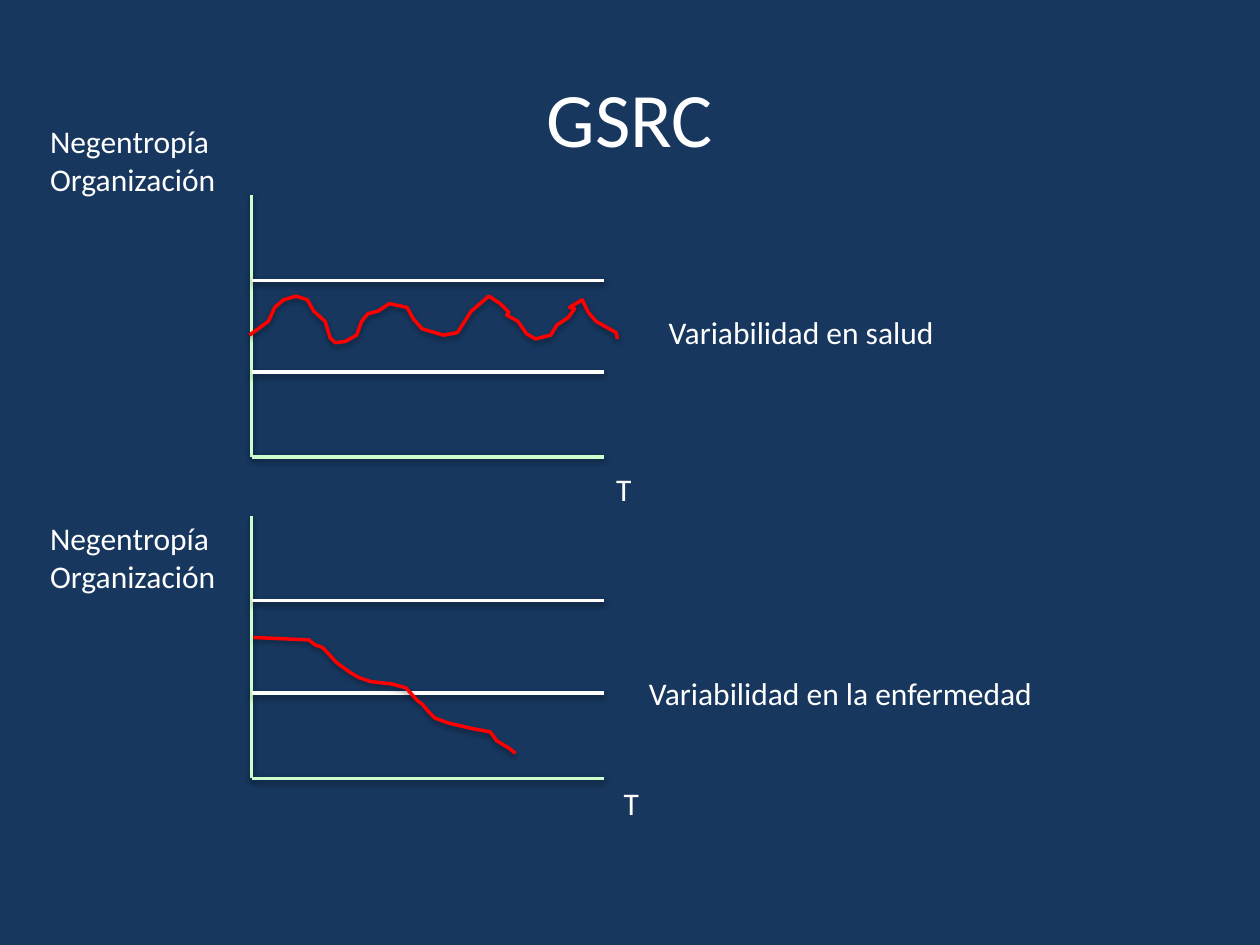
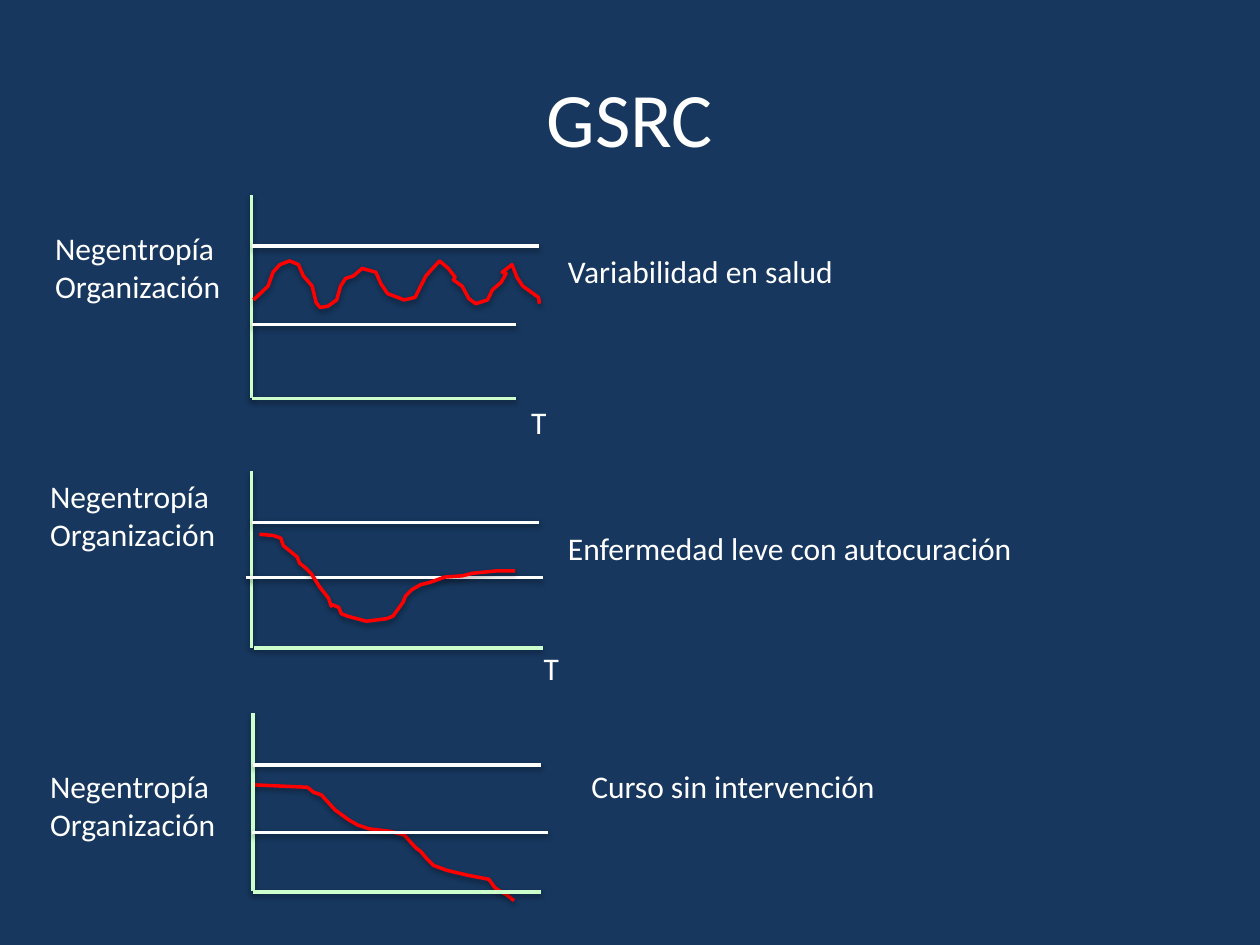
import pptx
import pptx.dml.color
import pptx.enum.shapes
import pptx.enum.text
import pptx.oxml
import pptx.util
from pptx.util import Cm

BACKGROUND, WHITE, AXIS_GREEN, CURVE_RED = "17375E", "FFFFFF", "CCFFCC", "FF0000"
FONT = "Calibri"
CURVE_UNIT = 0.0254  # cm per step of the curve points
NARROW = 2.27 / 2.92
SHADOW = (
    '<a:effectLst xmlns:a="http://schemas.openxmlformats.org/drawingml/2006/main">'
    '<a:outerShdw blurRad="40000" dist="20000" dir="5400000" rotWithShape="0">'
    '<a:srgbClr val="000000"><a:alpha val="38000"/></a:srgbClr>'
    "</a:outerShdw></a:effectLst>"
)

HEALTHY = [
    (0, 31), (15, 20), (20, 9), (27, 3), (37, 0), (46, 3), (51, 12), (60, 20),
    (64, 33), (68, 37), (76, 36), (85, 31), (89, 20), (94, 14), (102, 12), (111, 6),
    (125, 9), (130, 18), (137, 26), (154, 31), (165, 29), (176, 12), (190, 0),
    (199, 6), (206, 13), (204, 15), (213, 20), (220, 30), (227, 34), (239, 31),
    (244, 23), (253, 17), (258, 10), (254, 9), (264, 3), (269, 13), (275, 20),
    (291, 29), (292, 34),
]
DECLINE = [
    (0, 0), (44, 2), (49, 6), (55, 8), (66, 20), (77, 28), (84, 32), (93, 35),
    (110, 37), (121, 40), (130, 50), (134, 53), (139, 59), (144, 64), (155, 68),
    (172, 72), (188, 75), (193, 82), (203, 88), (208, 92),
]
RECOVERY = [
    (0, 0), (11, 1), (17, 3), (19, 9), (30, 18), (32, 23), (37, 27), (41, 31),
    (48, 42), (52, 47), (55, 51), (57, 57), (58, 56), (63, 58), (65, 63), (70, 65),
    (85, 69), (101, 67), (106, 65), (114, 54), (116, 49), (121, 44), (128, 40),
    (136, 38), (147, 34), (161, 33), (169, 31), (189, 29), (203, 29),
]

# Lengths in cm. axis: x, top, bottom; base and limits: left, right, y;
# curve: points, left, top, stretch; label: text, left, top, width.
SLIDES = [
    [
        dict(axis=(5.07, 3.94, 9.21), base=(5.07, 12.17, 9.21),
             limits=[(5.07, 12.17, 7.5), (5.07, 12.17, 5.65)],
             curve=(HEALTHY, 5.03, 5.97, 1), curve_behind=False,
             label=("Variabilidad en salud", 13.23, 6.19, 5.94),
             axis_title=(0.76, 2.34), time=(12.17, 9.35)),
        dict(axis=(5.07, 10.41, 15.69), base=(5.07, 12.17, 15.69),
             limits=[(5.07, 12.17, 13.97), (5.07, 12.17, 12.11)],
             curve=(DECLINE, 5.11, 12.85, 1), curve_behind=False,
             label=("Variabilidad en la enfermedad", 12.83, 13.46, 8.38),
             axis_title=(0.76, 10.34), time=(12.32, 15.69)),
    ],
    [
        dict(axis=(5.07, 3.94, 8.03), base=(5.07, 10.4, 8.03),
             limits=[(5.07, 10.4, 6.54), (5.07, 10.87, 4.96)],
             curve=(HEALTHY, 5.11, 5.26, NARROW), curve_behind=False,
             label=("Variabilidad en salud", 11.2, 4.95, 5.94),
             axis_title=(0.86, 4.5), time=(10.46, 8)),
        dict(axis=(5.07, 9.5, 13.06), base=(5.13, 10.94, 13.06),
             limits=[(4.95, 10.94, 11.64), (5.07, 10.87, 10.53)],
             curve=(RECOVERY, 5.23, 10.77, 1), curve_behind=False,
             label=("Enfermedad leve con autocuración", 11.2, 10.54, 9.75),
             axis_title=(0.76, 9.5), time=(10.71, 12.95)),
        dict(axis=(5.1, 14.38, 17.97), base=(5.1, 10.9, 17.98),
             limits=[(5.07, 11.05, 16.78), (5.1, 10.9, 15.42)],
             curve=(DECLINE, 5.08, 15.82, 1), curve_behind=True,
             label=("Curso sin intervención", 11.67, 15.34, 6.3),
             axis_title=(0.76, 15.34), time=None),
    ],
]


def color(hex_string):
    return pptx.dml.color.RGBColor.from_string(hex_string)


def add_text(slide, lines, left, top, width, height=1.02, size=18):
    box = slide.shapes.add_textbox(Cm(left), Cm(top), Cm(width), Cm(height))
    frame = box.text_frame
    frame.word_wrap = True
    for index, line in enumerate(lines):
        paragraph = frame.add_paragraph() if index else frame.paragraphs[0]
        run = paragraph.add_run()
        run.text = line
        run.font.name = FONT
        run.font.size = pptx.util.Pt(size)
        run.font.color.rgb = color(WHITE)
    return frame


presentation = pptx.Presentation()
presentation.slide_width, presentation.slide_height = Cm(25.4), Cm(19.05)

for panels in SLIDES:
    slide = presentation.slides.add_slide(presentation.slide_layouts[6])
    slide.background.fill.solid()
    slide.background.fill.fore_color.rgb = color(BACKGROUND)

    title = add_text(slide, ["GSRC"], 1.27, 0.76, 22.86, 3.18, 44)
    title.vertical_anchor = pptx.enum.text.MSO_ANCHOR.MIDDLE
    title.paragraphs[0].alignment = pptx.enum.text.PP_ALIGN.CENTER

    for panel in panels:
        axis_x, axis_top, axis_bottom = panel["axis"]
        strokes = [([(axis_x, axis_top), (axis_x, axis_bottom)], AXIS_GREEN)]
        for left, right, y in [panel["base"], *panel["limits"]]:
            line_color = AXIS_GREEN if (left, right, y) == panel["base"] else WHITE
            strokes.append(([(left, y), (right, y)], line_color))

        points, left, top, stretch = panel["curve"]
        curve = [(left + x * CURVE_UNIT * stretch, top + y * CURVE_UNIT) for x, y in points]
        strokes.insert(0 if panel["curve_behind"] else len(strokes), (curve, CURVE_RED))

        for stroke, stroke_color in strokes:
            start, *rest = [(Cm(x), Cm(y)) for x, y in stroke]
            if len(rest) == 1:
                shape = slide.shapes.add_connector(
                    pptx.enum.shapes.MSO_CONNECTOR.STRAIGHT, *start, *rest[0])
            else:
                builder = slide.shapes.build_freeform(*start)
                builder.add_line_segments(rest, close=False)
                shape = builder.convert_to_shape()
                shape.fill.background()
            shape.line.color.rgb = color(stroke_color)
            shape.line.width = pptx.util.Pt(2)
            shape.element.spPr.append(pptx.oxml.parse_xml(SHADOW))

        text, left, top, width = panel["label"]
        add_text(slide, [text], left, top, width)
        add_text(slide, ["Negentropía", "Organización"], *panel["axis_title"], 3.91, 1.8)
        if panel["time"]:
            add_text(slide, ["T"], *panel["time"], 1.85)

presentation.save("out.pptx")
